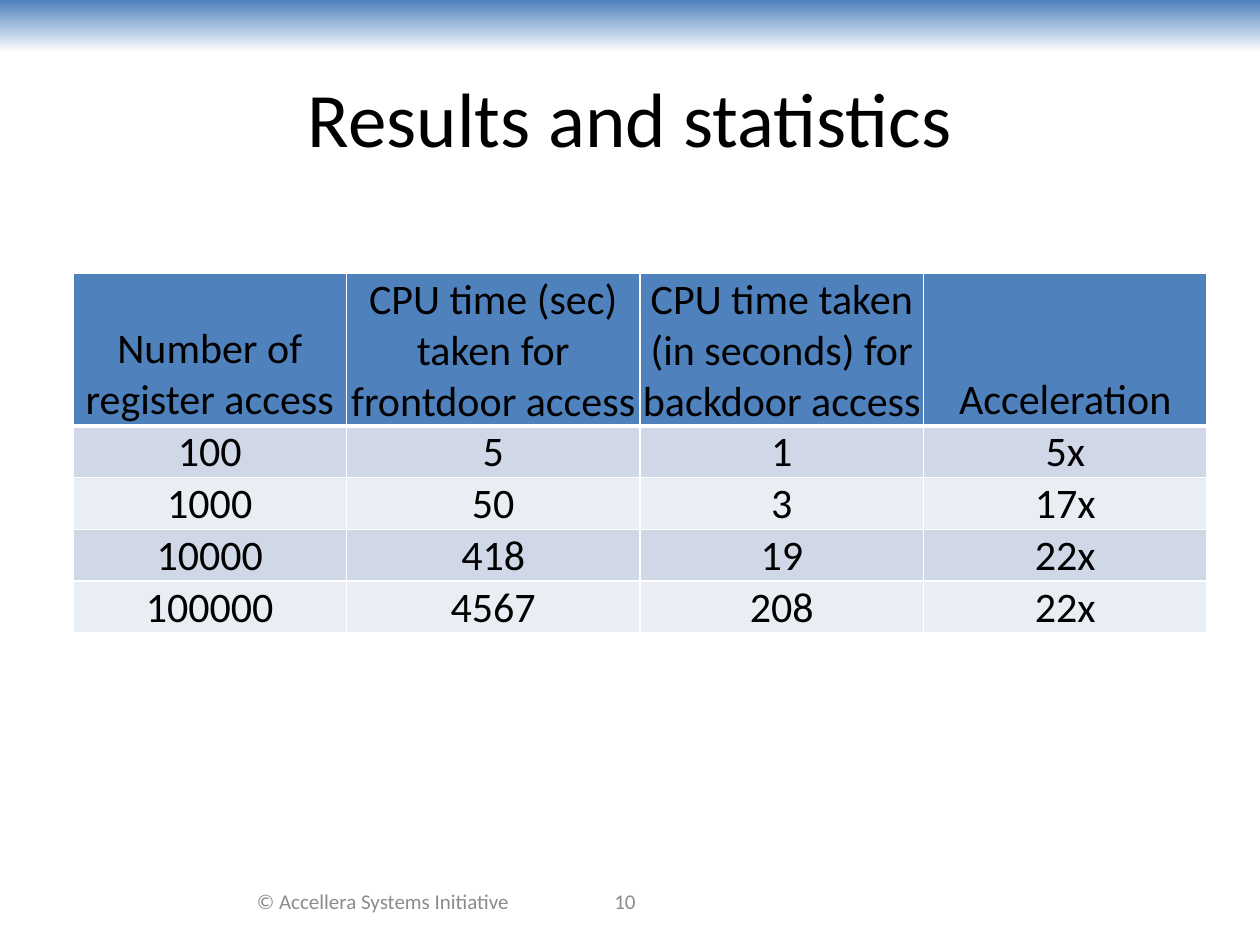
from lxml.etree import SubElement
from pptx import Presentation
from pptx.dml.color import RGBColor
from pptx.enum.shapes import MSO_SHAPE
from pptx.enum.text import MSO_ANCHOR, PP_ALIGN
from pptx.oxml import parse_xml
from pptx.oxml.ns import nsdecls, qn
from pptx.util import Inches, Pt

TITLE = "Results and statistics"
HEADER = [
    "Number of register access",
    "CPU time (sec) taken for frontdoor access",
    "CPU time taken (in seconds) for backdoor access",
    "Acceleration",
]
RESULTS = [
    ("100", "5", "1", "5x"),
    ("1000", "50", "3", "17x"),
    ("10000", "418", "19", "22x"),
    ("100000", "4567", "208", "22x"),
]
FOOTERS = [  # text, left, width
    ("© Accellera Systems Initiative", 1.83, 2.42),
    ("10", 4, 1.92),
]
COLUMN_WIDTHS = [2.17, 2.33, 2.25, 2.25]
HEADER_HEIGHT, ROW_HEIGHT = 1.21, 0.41

FONT = "Calibri"
BLUE = RGBColor(0x4F, 0x81, 0xBD)
BAND_COLORS = [RGBColor(0xD0, 0xD8, 0xE8), RGBColor(0xE9, 0xED, 0xF4)]
WHITE = RGBColor(0xFF, 0xFF, 0xFF)
BLACK = RGBColor(0, 0, 0)
GRAY = RGBColor(0x8C, 0x8C, 0x8C)


def set_text(text_frame, text, size, color):
    text_frame.text = text
    text_frame.word_wrap = True
    paragraph = text_frame.paragraphs[0]
    paragraph.alignment = PP_ALIGN.CENTER
    font = paragraph.runs[0].font
    font.name, font.size, font.color.rgb = FONT, Pt(size), color


def set_borders(cell, widths):
    """Draw white cell borders; widths maps L, R, T, B to points."""
    properties = cell._tc.get_or_add_tcPr()
    for index, (side, width) in enumerate(widths.items()):
        line = parse_xml(f'<a:ln{side} {nsdecls("a")} w="{Pt(width)}"/>')
        fill = SubElement(line, qn("a:solidFill"))
        SubElement(fill, qn("a:srgbClr"), val=str(WHITE))
        properties.insert(index, line)


def add_top_band(slide, width):
    band = slide.shapes.add_shape(MSO_SHAPE.RECTANGLE, 0, 0, width, Inches(0.42))
    band.shadow.inherit = False
    band.line.fill.background()
    band.fill.gradient()
    band.fill.gradient_angle = 270
    for stop, color in zip(band.fill.gradient_stops, (BLUE, WHITE)):
        stop.color.rgb = color


def add_results_table(slide):
    rows = [HEADER, *RESULTS]
    heights = [HEADER_HEIGHT] + [ROW_HEIGHT] * len(RESULTS)
    table = slide.shapes.add_table(
        len(rows), len(HEADER), Inches(0.58), Inches(2.17),
        Inches(sum(COLUMN_WIDTHS)), Inches(sum(heights)),
    ).table
    for column, width in zip(table.columns, COLUMN_WIDTHS):
        column.width = Inches(width)
    for r, (values, height) in enumerate(zip(rows, heights)):
        table.rows[r].height = Inches(height)
        color = BAND_COLORS[(r - 1) % 2] if r else BLUE
        borders = {"L": 1, "R": 1, "T": 3 if r == 1 else 1, "B": 3 if r == 0 else 1}
        for c, value in enumerate(values):
            cell = table.cell(r, c)
            set_text(cell.text_frame, value, 24, BLACK)
            cell.vertical_anchor = MSO_ANCHOR.BOTTOM
            cell.margin_left = cell.margin_right = cell.margin_top = Inches(0.01)
            cell.margin_bottom = 0
            cell.fill.solid()
            cell.fill.fore_color.rgb = color
            set_borders(cell, borders)


def main():
    presentation = Presentation()
    presentation.slide_width, presentation.slide_height = Inches(10), Inches(7.5)
    slide = presentation.slides.add_slide(presentation.slide_layouts[5])

    add_top_band(slide, presentation.slide_width)
    title = slide.shapes.title
    title.left, title.top = Inches(0.5), Inches(0.3)
    title.width, title.height = Inches(9), Inches(1.25)
    set_text(title.text_frame, TITLE, 44, BLACK)
    title.text_frame.vertical_anchor = MSO_ANCHOR.MIDDLE

    for text, left, width in FOOTERS:
        box = slide.shapes.add_textbox(
            Inches(left), Inches(6.95), Inches(width), Inches(0.4))
        set_text(box.text_frame, text, 12, GRAY)
        box.text_frame.vertical_anchor = MSO_ANCHOR.MIDDLE

    add_results_table(slide)
    presentation.save("out.pptx")


if __name__ == "__main__":
    main()
